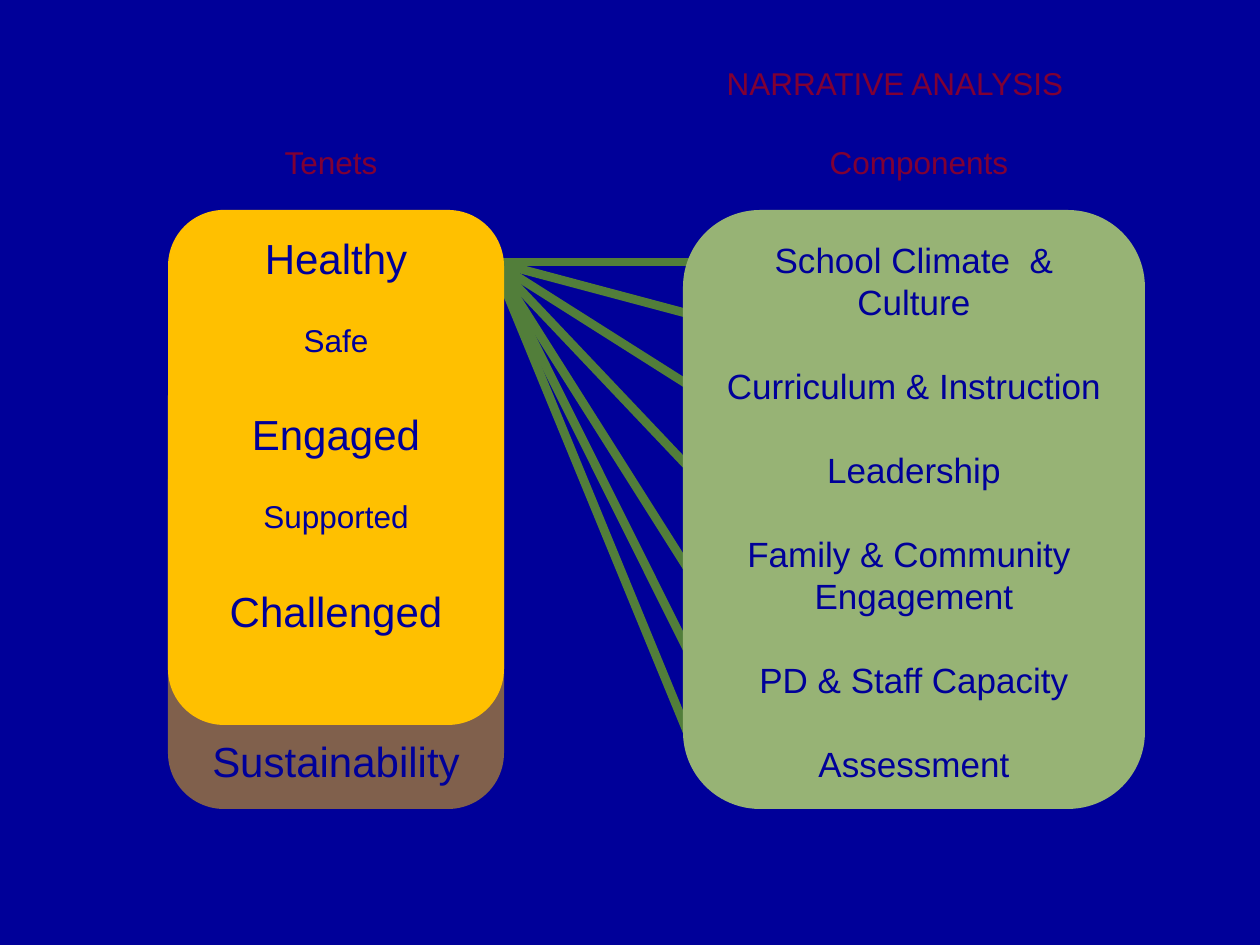
import dataclasses

import pptx
import pptx.dml.color
import pptx.enum.shapes
import pptx.enum.text
import pptx.oxml.ns
import pptx.util
from lxml import etree

ANCHOR = pptx.enum.text.MSO_ANCHOR
KIND = pptx.enum.shapes.MSO_SHAPE
SCALE = 914400 / 126  # EMU in one px
LEAD = 1.2  # height of an empty line, as a share of its type size


@dataclasses.dataclass(frozen=True)
class Theme:
    back: str = "000099"
    ink: str = "000099"
    head: str = "800033"
    gold: str = "FFC000"
    sage: str = "97B375"
    ray: str = "527E3A"
    font: str = "Arial"
    large: int = 24
    mid: int = 20
    small: int = 18
    stroke: int = 5


THEME = Theme()


@dataclasses.dataclass(frozen=True)
class Line:
    text: str
    size: int
    gap: int = 0  # type size of the empty line left above


@dataclasses.dataclass(frozen=True)
class Card:
    box: tuple[int, int, int, int]
    lines: list[Line]
    fill: str = ""
    ink: str = THEME.ink
    anchor: ANCHOR = ANCHOR.TOP
    alpha: int = 100


BIG, MID, LOW = THEME.large, THEME.mid, THEME.small

HEADS = [
    Card((x, y, w, 46), [Line(text, LOW)], ink=THEME.head, anchor=ANCHOR.MIDDLE)
    for text, x, y, w in [
        ("NARRATIVE ANALYSIS", 695, 60, 400),
        ("Tenets", 231, 139, 200),
        ("Components", 799, 139, 240),
    ]
]

CARDS = [
    Card((168, 294, 336, 515), [Line("Sustainability", BIG)], THEME.gold,
         anchor=ANCHOR.BOTTOM, alpha=50),
    Card((168, 210, 336, 515), [
        Line("Healthy", BIG),
        Line("Safe", LOW, LOW),
        Line("Engaged", BIG, BIG),
        Line("Supported", LOW, LOW),
        Line("Challenged", BIG, BIG),
    ], THEME.gold),
    Card((683, 210, 462, 599), [
        Line("School Climate  & Culture", MID),
        Line("Curriculum & Instruction", MID, MID),
        Line("Leadership", MID, MID),
        Line("Family & Community ", MID, MID),
        Line("Engagement", MID),
        Line("PD & Staff Capacity", MID, MID),
        Line("Assessment", MID, MID),
    ], THEME.sage),
]

HUB = (494, 262)
RAYS = [(HUB, (693, y)) for y in (315, 388, 472, 577, 661, 746)]
RAYS.append(((451, 262), (714, 262)))


def emu(*px: int) -> list[int]:
    return [round(n * SCALE) for n in px]


def rgb(code: str) -> pptx.dml.color.RGBColor:
    return pptx.dml.color.RGBColor.from_string(code)


def style(item: object, values: dict) -> None:
    for name, value in values.items():
        setattr(item, name, value)


def write(frame: object, card: Card) -> None:
    style(frame, {"word_wrap": True, "vertical_anchor": card.anchor})
    for i, line in enumerate(card.lines):
        para = frame.add_paragraph() if i else frame.paragraphs[0]
        style(para, {
            "alignment": pptx.enum.text.PP_ALIGN.CENTER,
            "space_before": pptx.util.Pt(line.gap * LEAD),
        })
        run = para.add_run()
        run.text = line.text
        style(run.font, {"name": THEME.font, "size": pptx.util.Pt(line.size)})
        run.font.color.rgb = rgb(card.ink)


def draw_card(slide: object, card: Card) -> None:
    """Draw a rounded box, or bare text if the card has no fill."""
    if card.fill:
        shape = slide.shapes.add_shape(KIND.ROUNDED_RECTANGLE, *emu(*card.box))
        shape.shadow.inherit = False
        shape.line.fill.background()
        shape.fill.solid()
        shape.fill.fore_color.rgb = rgb(card.fill)
        if card.alpha < 100:
            tone = shape.element.spPr.find(".//" + pptx.oxml.ns.qn("a:srgbClr"))
            etree.SubElement(tone, pptx.oxml.ns.qn("a:alpha"),
                             val=str(card.alpha * 1000))
    else:
        shape = slide.shapes.add_textbox(*emu(*card.box))
    write(shape.text_frame, card)


def draw_ray(slide: object, start: tuple[int, int], end: tuple[int, int]) -> None:
    ray = slide.shapes.add_connector(
        pptx.enum.shapes.MSO_CONNECTOR.STRAIGHT, *emu(*start, *end))
    ray.line.width = pptx.util.Pt(THEME.stroke)
    ray.line.color.rgb = rgb(THEME.ray)
    etree.SubElement(ray.element.spPr, pptx.oxml.ns.qn("a:effectLst"))


def main() -> None:
    deck = pptx.Presentation()
    wide, high = emu(1260, 945)
    style(deck, {"slide_width": wide, "slide_height": high})
    slide = deck.slides.add_slide(deck.slide_layouts[6])
    slide.background.fill.solid()
    slide.background.fill.fore_color.rgb = rgb(THEME.back)
    for start, end in RAYS:
        draw_ray(slide, start, end)
    for card in HEADS + CARDS:
        draw_card(slide, card)
    deck.save("out.pptx")


if __name__ == "__main__":
    main()
